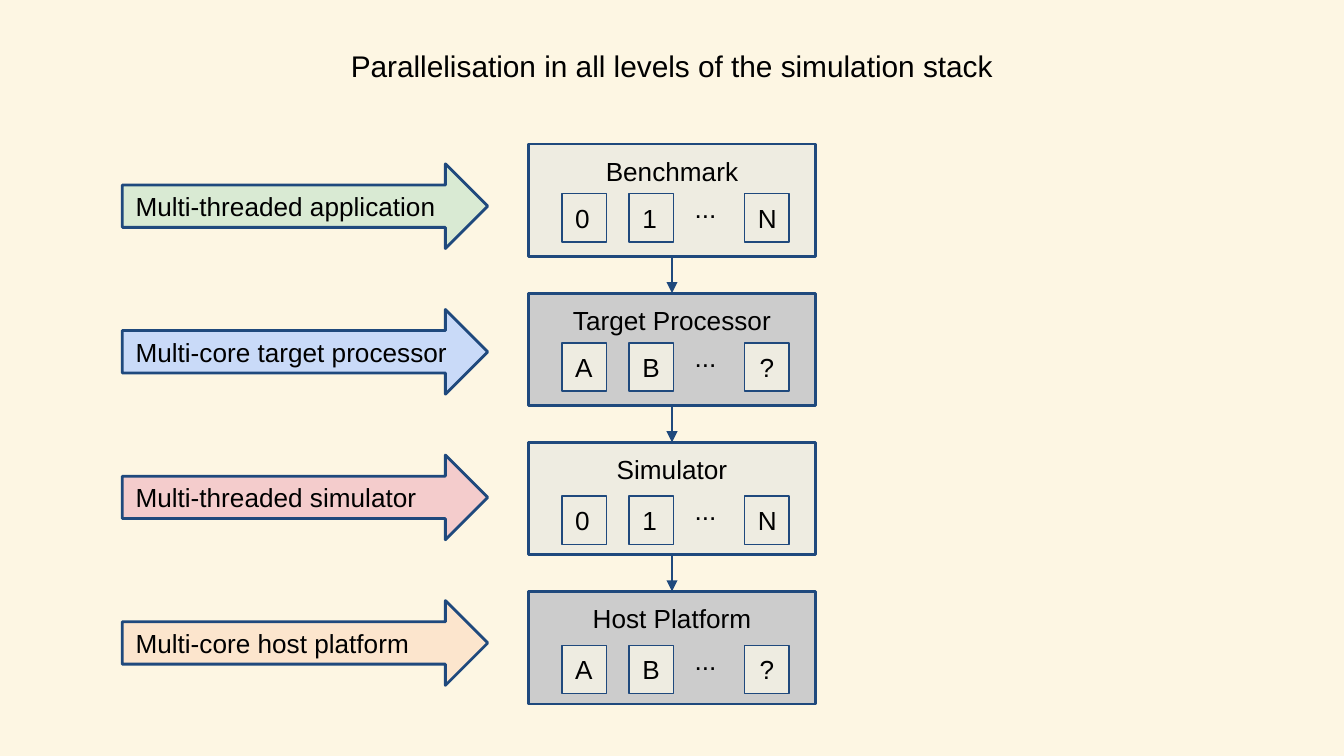
from lxml.etree import SubElement as Sub
from pptx import Presentation
from pptx.dml.color import RGBColor as Rgb
from pptx.enum.shapes import MSO_CONNECTOR as Conn, MSO_SHAPE as Form
from pptx.enum.text import MSO_ANCHOR as Anchor, PP_ALIGN as Align
from pptx.oxml.ns import qn
from pptx.util import Pt

HUES = {
    "page": "FDF6E3", "ink": "000000", "edge": "1F497D",
    "pale": "EEECE1", "grey": "CCCCCC", "green": "D9EAD3",
    "blue": "C9DAF8", "red": "F4CCCC", "peach": "FCE5CD",
}
PAD = 7.2
LEVELS = [
    ("Benchmark", "pale", "01N", 26.6, "Multi-threaded application", "green"),
    ("Target Processor", "grey", "AB?", 26.6, "Multi-core target processor", "blue"),
    ("Simulator", "pale", "01N", 28.8, "Multi-threaded simulator", "red"),
    ("Host Platform", "grey", "AB?", 28.8, "Multi-core host platform", "peach"),
]


def hue(name):
    """Return the named colour."""
    return Rgb.from_string(HUES[name])


def write(shape, text, size=14, align=Align.LEFT, anchor=Anchor.MIDDLE, pad=PAD):
    """Set one line of text in a shape."""
    frame = shape.text_frame
    sides = ("left", "right", "top", "bottom")
    form = {f"margin_{side}": Pt(pad) for side in sides}
    form |= {"word_wrap": True, "vertical_anchor": anchor}
    for key, val in form.items():
        setattr(frame, key, val)
    para = frame.paragraphs[0]
    para.alignment = align
    run = para.add_run()
    run.text = text
    for key, val in {"name": "Arial", "size": Pt(size)}.items():
        setattr(run.font, key, val)
    run.font.color.rgb = hue("ink")


def block(slide, form, box, fill, text, weight=1.5, **style):
    """Draw a filled, outlined shape with text."""
    shape = slide.shapes.add_shape(form, *map(Pt, box))
    shape.shadow.inherit = False
    shape.fill.solid()
    shape.fill.fore_color.rgb = hue(fill)
    shape.line.color.rgb = hue("edge")
    shape.line.width = Pt(weight)
    write(shape, text, **style)


def label(slide, box, text, **style):
    """Place a plain text box."""
    write(slide.shapes.add_textbox(*map(Pt, box)), text, **style)


def level(slide, box, name, fill, marks, drop):
    """Draw one stack level with its row of units."""
    left, top = box[:2]
    block(slide, Form.RECTANGLE, box, fill, name,
          align=Align.CENTER, anchor=Anchor.TOP, pad=6)
    aligns = (Align.LEFT, Align.LEFT, Align.CENTER)
    for mark, shift, align in zip(marks, (18, 54, 116), aligns):
        cell = (left + shift, top + drop, 23.8, 25.9)
        block(slide, Form.RECTANGLE, cell, "pale", mark, 0.75, align=align)
    label(slide, (left + 82, top + drop - 7.9, 29.5, 31.7), "...", anchor=Anchor.TOP)


def link(slide, mid, top, end):
    """Draw a downward arrow between two levels."""
    line = slide.shapes.add_connector(Conn.STRAIGHT, *map(Pt, (mid, top, mid, end)))
    line.line.color.rgb = hue("edge")
    line.line.width = Pt(1.5)
    Sub(line.line._get_or_add_ln(), qn("a:tailEnd"), type="triangle")
    Sub(line._element.spPr, qn("a:effectLst"))


def stack(slide, box, gap):
    """Draw the linked levels from top to bottom."""
    left, top, wide, high = box
    for row, (name, fill, marks, drop, *_) in enumerate(LEVELS):
        y = top + row * (high + gap)
        level(slide, (left, y, wide, high), name, fill, marks, drop)
        if row:
            link(slide, left + wide / 2, y - gap, y)


def notes(slide, box, step):
    """Draw the arrow captions beside the stack."""
    left, top, wide, high = box
    for row, (*_, text, fill) in enumerate(LEVELS):
        place = (left, top + row * step, wide, high)
        block(slide, Form.RIGHT_ARROW, place, fill, text)


def main():
    """Build and save the slide."""
    deck = Presentation()
    deck.slide_width, deck.slide_height = Pt(720), Pt(405)
    slide = deck.slides.add_slide(deck.slide_layouts[6])
    slide.background.fill.solid()
    slide.background.fill.fore_color.rgb = hue("page")
    label(slide, (24.5, 12.5, 671, 45.4),
          "Parallelisation in all levels of the simulation stack",
          size=16, align=Align.CENTER, pad=6.5)
    stack(slide, (283, 77.2, 154, 60.3), 19.6)
    notes(slide, (65.5, 87.8, 195.8, 45.4), 78)
    deck.save("out.pptx")


if __name__ == "__main__":
    main()
